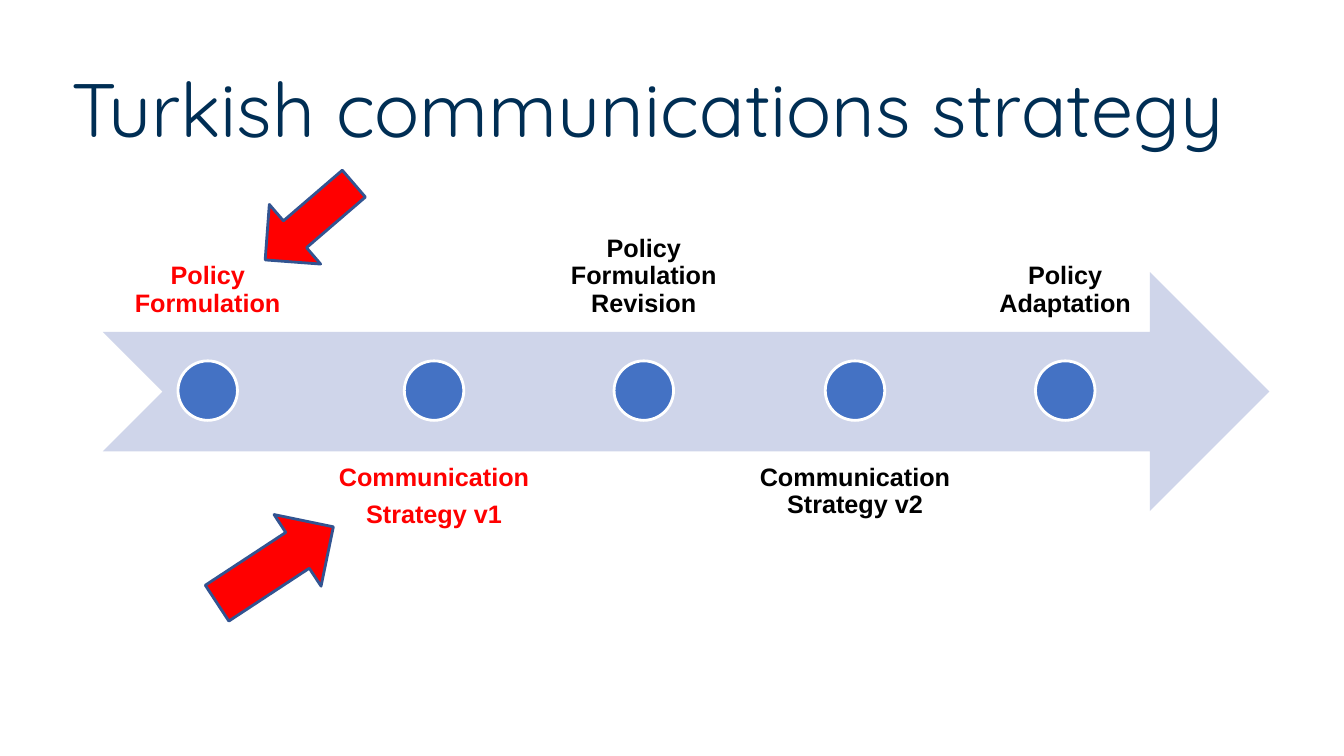
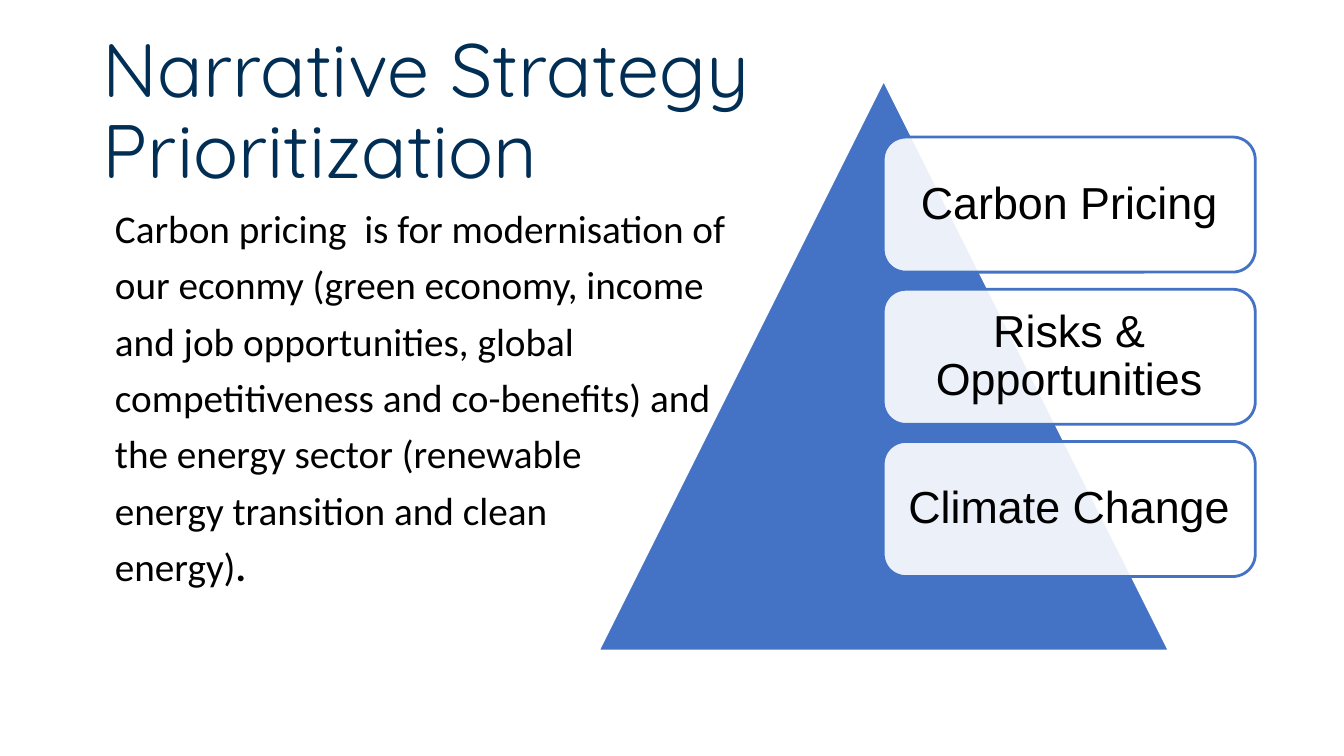
"""Build two slides on a communications strategy: a timeline and a pyramid."""

from dataclasses import dataclass

from lxml.etree import SubElement
from pptx import Presentation
from pptx.dml.color import RGBColor
from pptx.enum.shapes import MSO_SHAPE
from pptx.enum.text import MSO_ANCHOR, MSO_AUTO_SIZE, PP_ALIGN
from pptx.oxml.ns import qn
from pptx.presentation import Presentation as Deck
from pptx.shapes.autoshape import Shape
from pptx.slide import Slide
from pptx.text.text import TextFrame, _Paragraph
from pptx.util import Inches, Pt

NAVY = RGBColor(0x00, 0x2E, 0x54)
BLUE = RGBColor(0x44, 0x72, 0xC4)
PALE_BLUE = RGBColor(0xCF, 0xD5, 0xEA)
EDGE_BLUE = RGBColor(0x32, 0x54, 0x91)
RED = RGBColor(0xFF, 0x00, 0x00)
BLACK = RGBColor(0x00, 0x00, 0x00)
WHITE = RGBColor(0xFF, 0xFF, 0xFF)

TITLE_ONLY, TITLE_AND_CONTENT = 5, 1


@dataclass(frozen=True)
class Box:
    left: float
    top: float
    width: float
    height: float

    def lengths(self) -> tuple[Inches, ...]:
        return tuple(map(Inches, (self.left, self.top, self.width, self.height)))


@dataclass(frozen=True)
class Stage:
    lines: tuple[str, ...]
    width: float
    color: RGBColor = BLACK


@dataclass(frozen=True)
class Pointer:
    preset: MSO_SHAPE
    box: Box
    rotation: float
    shaft: float


STAGES = (
    Stage(("Policy Formulation",), 2.08, RED),
    Stage(("Communication", "Strategy v1"), 2.35, RED),
    Stage(("Policy Formulation Revision",), 1.75),
    Stage(("Communication Strategy v2",), 2.38),
    Stage(("Policy Adaptation",), 1.73),
)
POINTERS = (
    Pointer(MSO_SHAPE.LEFT_ARROW, Box(2.49, 1.81, 1.16, 0.78), 319.3, 0.45),
    Pointer(MSO_SHAPE.RIGHT_ARROW, Box(2.04, 5.18, 1.38, 0.85), 326.7, 0.5),
)
NARRATIVE = (
    "Carbon pricing  is for modernisation of",
    "our econmy (green economy, income",
    "and job opportunities, global",
    "competitiveness and co-benefits) and",
    "the energy sector (renewable",
    "energy transition and clean",
    "energy)",
)
PRIORITIES = ("Carbon Pricing", "Risks & Opportunities", "Climate Change")


def write(para: _Paragraph, text: str, *, font: str, size: float, color: RGBColor,
          bold: bool = False, align: PP_ALIGN = PP_ALIGN.LEFT,
          before: float = 0, after: float = 0) -> None:
    """Append formatted text to a paragraph, breaking lines at newlines."""
    para.alignment = align
    para.line_spacing = 0.9
    para.space_before, para.space_after = Pt(before), Pt(after)
    for number, line in enumerate(text.split("\n")):
        if number:
            para.add_line_break()
        span = para.add_run()
        span.text = line
        span.font.name, span.font.size = font, Pt(size)
        span.font.color.rgb, span.font.bold = color, bold


def set_frame(frame: TextFrame, anchor: MSO_ANCHOR, across: float, down: float) -> None:
    """Set wrapping, anchor and insets of a text frame."""
    frame.auto_size = MSO_AUTO_SIZE.NONE
    frame.word_wrap = True
    frame.vertical_anchor = anchor
    frame.margin_left = frame.margin_right = Inches(across)
    frame.margin_top = frame.margin_bottom = Inches(down)


def next_paragraph(frame: TextFrame, number: int) -> _Paragraph:
    """Return the first paragraph of a frame, or a new one after it."""
    return frame.add_paragraph() if number else frame.paragraphs[0]


def place(shape: Shape, box: Box) -> None:
    """Move a shape to a box and size it."""
    shape.left, shape.top, shape.width, shape.height = box.lengths()


def add_figure(page: Slide, preset: MSO_SHAPE, box: Box, fill: RGBColor,
               line: RGBColor | None = None) -> Shape:
    """Add a flat preset shape with an optional outline."""
    shape = page.shapes.add_shape(preset, *box.lengths())
    shape.shadow.inherit = False
    shape.fill.solid()
    shape.fill.fore_color.rgb = fill
    if line is None:
        shape.line.fill.background()
    else:
        shape.line.color.rgb, shape.line.width = line, Pt(2)
    return shape


def add_page(deck: Deck, layout: int, title: str, box: Box) -> Slide:
    """Add a slide with the shared title style."""
    page = deck.slides.add_slide(deck.slide_layouts[layout])
    place(page.shapes.title, box)
    frame = page.shapes.title.text_frame
    set_frame(frame, MSO_ANCHOR.MIDDLE, 0.1, 0.05)
    write(frame.paragraphs[0], title, font="Quicksand", size=54, color=NAVY)
    return page


def add_stage(page: Slide, stage: Stage, left: float, above: bool) -> None:
    """Add a timeline label and its dot."""
    box = Box(left, 0.92 if above else 4.47, stage.width, 2.37)
    frame = page.shapes.add_textbox(*box.lengths()).text_frame
    set_frame(frame, MSO_ANCHOR.BOTTOM if above else MSO_ANCHOR.TOP, 0.14, 0.14)
    for number, line in enumerate(stage.lines):
        write(next_paragraph(frame, number), line, font="Arial", size=18,
              color=stage.color, bold=True, align=PP_ALIGN.CENTER, after=7)
    diameter = 0.59
    dot = Box(left + (stage.width - diameter) / 2, 3.58, diameter, diameter)
    add_figure(page, MSO_SHAPE.OVAL, dot, BLUE, WHITE)


def add_timeline(deck: Deck) -> None:
    """Build the timeline slide."""
    page = add_page(deck, TITLE_ONLY, "Turkish communications strategy",
                    Box(0.61, 0.4, 12.16, 1.45))
    left = 1.02
    add_figure(page, MSO_SHAPE.NOTCHED_RIGHT_ARROW, Box(left, 2.7, 11.57, 2.37), PALE_BLUE)
    for number, stage in enumerate(STAGES):
        add_stage(page, stage, left, above=number % 2 == 0)
        left += stage.width + 0.03
    for pointer in POINTERS:
        arrow = add_figure(page, pointer.preset, pointer.box, RED, EDGE_BLUE)
        arrow.rotation = pointer.rotation
        arrow.adjustments[0] = pointer.shaft


def add_narrative(page: Slide) -> None:
    """Fill the body placeholder with the narrative."""
    body = page.placeholders[1]
    place(body, Box(0.92, 2.03, 11.5, 4.18))
    frame = body.text_frame
    set_frame(frame, MSO_ANCHOR.TOP, 0.1, 0.05)
    for number, line in enumerate(NARRATIVE):
        para = next_paragraph(frame, number)
        properties = para._p.get_or_add_pPr()
        properties.set("marL", str(Inches(0.12)))
        properties.set("indent", "0")
        SubElement(properties, qn("a:buNone"))
        before = 10 if number else 0
        write(para, line, font="Calibri", size=28, color=BLACK, before=before)
    write(para, ".", font="Calibri", size=28, color=BLACK, bold=True, before=before)


def add_card(page: Slide, text: str, top: float) -> None:
    """Add a translucent rounded card with centred text."""
    card = add_figure(page, MSO_SHAPE.ROUNDED_RECTANGLE, Box(8.76, top, 3.69, 1.34), WHITE, BLUE)
    color = card.element.spPr.find(qn("a:solidFill")).find(qn("a:srgbClr"))
    SubElement(color, qn("a:alpha")).set("val", "90000")
    set_frame(card.text_frame, MSO_ANCHOR.MIDDLE, 0.13, 0.13)
    write(card.text_frame.paragraphs[0], text, font="Arial", size=32, color=BLACK,
          align=PP_ALIGN.CENTER)


def add_pyramid(deck: Deck) -> None:
    """Build the pyramid slide."""
    page = add_page(deck, TITLE_AND_CONTENT, "Narrative Strategy\nPrioritization",
                    Box(0.92, 0.4, 11.5, 1.45))
    add_narrative(page)
    add_figure(page, MSO_SHAPE.ISOSCELES_TRIANGLE, Box(5.93, 0.79, 5.67, 5.67), BLUE, WHITE)
    for number, priority in enumerate(PRIORITIES):
        add_card(page, priority, 1.36 + 1.51 * number)


def main() -> None:
    """Build and save the deck."""
    deck = Presentation()
    deck.slide_width, deck.slide_height = Inches(13.33), Inches(7.5)
    add_timeline(deck)
    add_pyramid(deck)
    deck.save("out.pptx")


if __name__ == "__main__":
    main()
